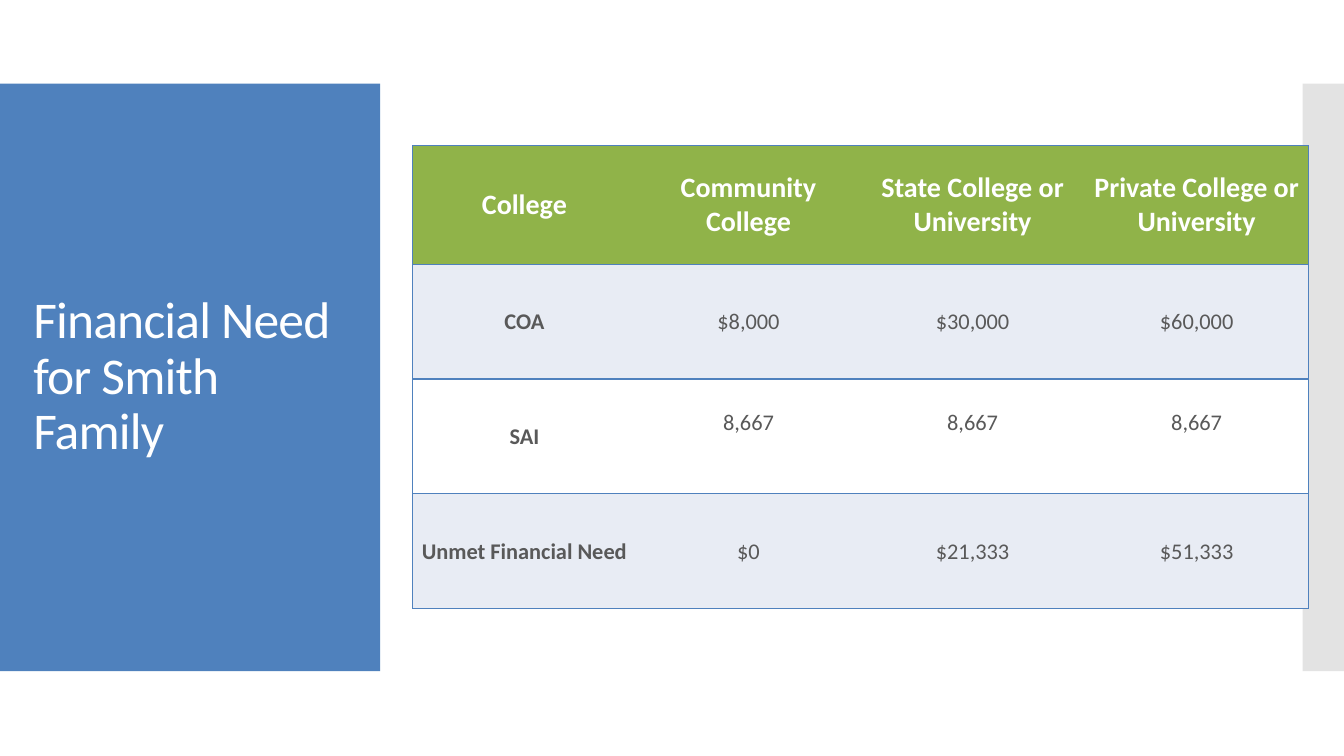
"""Build the slide on financial need for the Smith family."""
import pptx
import pptx.dml.color
import pptx.enum.shapes
import pptx.enum.text
import pptx.oxml
import pptx.oxml.ns
import pptx.util

Inches = pptx.util.Inches
Pt = pptx.util.Pt
ALIGN = pptx.enum.text.PP_ALIGN
MIDDLE = pptx.enum.text.MSO_ANCHOR.MIDDLE
NS = pptx.oxml.ns.nsdecls("a")
BLUE, GREEN, PALE = "4F81BD", "90B349", "E8ECF4"
WHITE, DARK, GREY = "FFFFFF", "595959", "C8C8C8"


def color(code):
    return pptx.dml.color.RGBColor.from_string(code)


class Deck:
    font = "Calibri"
    inset = Inches(0.05)

    def __init__(self):
        self.show = pptx.Presentation()
        self.show.slide_width = Inches(13.33)
        self.show.slide_height = Inches(7.5)
        self.slide = self.show.slides.add_slide(self.show.slide_layouts[6])

    def style(self, para, size, code, bold=False):
        for run in para.runs:
            run.font.name = self.font
            run.font.size = Pt(size)
            run.font.bold = bold
            run.font.color.rgb = color(code)

    def pad(self, item):
        item.margin_left = item.margin_right = self.inset
        item.margin_top = item.margin_bottom = self.inset
        item.vertical_anchor = MIDDLE

    def rect(self, box, fill=None, alpha=None, line=None, width=1):
        kind = pptx.enum.shapes.MSO_SHAPE.RECTANGLE
        shape = self.slide.shapes.add_shape(kind, *map(Inches, box))
        shape.shadow.inherit = False
        if fill:
            shape.fill.solid()
            shape.fill.fore_color.rgb = color(fill)
        else:
            shape.fill.background()
        if alpha:
            tone = shape.fill._xPr.find(".//" + pptx.oxml.ns.qn("a:srgbClr"))
            tone.append(pptx.oxml.parse_xml(f'<a:alpha {NS} val="{alpha * 1000}"/>'))
        if line:
            shape.line.color.rgb = color(line)
            shape.line.width = Pt(width)
        else:
            shape.line.fill.background()

    def title(self, box, text):
        frame = self.slide.shapes.add_textbox(*map(Inches, box)).text_frame
        frame.word_wrap = True
        self.pad(frame)
        frame.text = text
        para = frame.paragraphs[0]
        para.line_spacing = 0.9
        self.style(para, 36.8, WHITE)
        para.runs[0]._r.get_or_add_rPr().set("spc", "-60")

    def edge(self, cell):
        none = "<a:noFill/>"
        solid = f'<a:solidFill><a:srgbClr val="{BLUE}"/></a:solidFill>'
        sides = {"L": none, "R": none, "T": solid, "B": solid}
        props = cell._tc.get_or_add_tcPr()
        for spot, (side, fill) in enumerate(sides.items()):
            xml = f'<a:ln{side} {NS} w="12700">{fill}</a:ln{side}>'
            props.insert(spot, pptx.oxml.parse_xml(xml))

    def cell(self, cell, text, fill, size, code, bold):
        cell.text = text
        self.pad(cell)
        cell.fill.solid()
        cell.fill.fore_color.rgb = color(fill)
        para = cell.text_frame.paragraphs[0]
        para.alignment = ALIGN.CENTER
        self.style(para, size, code, bold)
        self.edge(cell)

    def table(self, box, rows, highs):
        frame = self.slide.shapes.add_table(len(rows), len(rows[0]), *map(Inches, box))
        grid = frame.table
        grid.horz_banding = False
        for row, high in zip(grid.rows, highs):
            row.height = Inches(high)
        for y, row in enumerate(rows):
            for x, text in enumerate(row):
                if y == 0:
                    look = GREEN, 20, WHITE, True
                else:
                    look = PALE if y % 2 else WHITE, 16, DARK, x == 0
                self.cell(grid.cell(y, x), text, *look)
        return grid


def main():
    rows = [
        ["College", "Community College", "State College or University",
         "Private College or University"],
        ["COA", "$8,000", "$30,000", "$60,000"],
        ["SAI", "8,667", "8,667", "8,667"],
        ["Unmet Financial Need", "$0", "$21,333", "$51,333"],
    ]
    area = 4.09, 1.44, 8.89, 4.6
    deck = Deck()
    deck.rect((0, 0.83, 3.77, 5.83), BLUE)
    deck.rect((12.92, 0.83, 0.41, 5.83), GREY, alpha=50)
    grid = deck.table(area, rows, [1.18, 1.14, 1.14, 1.14])
    for x in range(1, 4):
        grid.cell(2, x).margin_bottom = Inches(0.32)
    deck.title((0.28, 1.23, 3.22, 5.03), "Financial Need for Smith Family")
    deck.rect(area, line=BLUE, width=0.85)
    deck.show.save("out.pptx")


if __name__ == "__main__":
    main()
